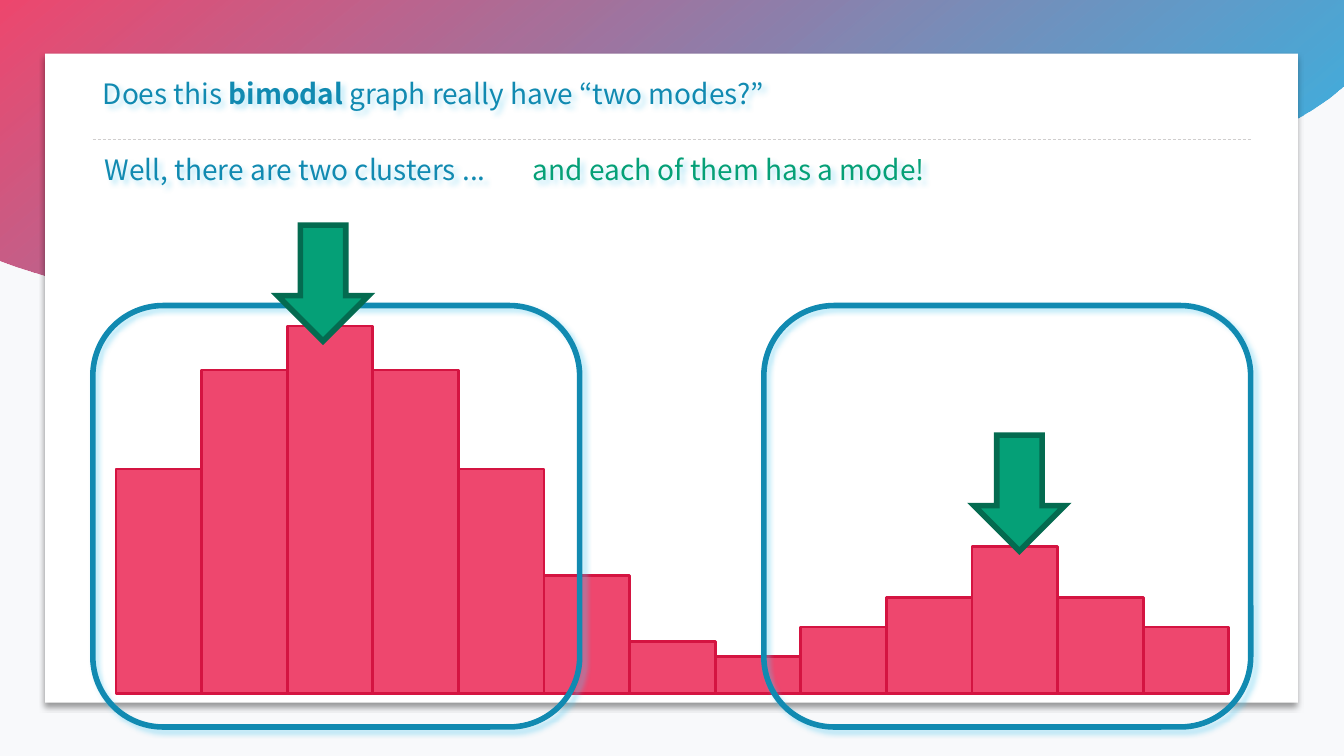
from lxml.etree import SubElement
from pptx import Presentation
from pptx.chart.data import CategoryChartData
from pptx.dml.color import RGBColor
from pptx.enum.chart import XL_CHART_TYPE
from pptx.enum.dml import MSO_LINE
from pptx.enum.shapes import MSO_CONNECTOR, MSO_SHAPE
from pptx.oxml import parse_xml
from pptx.oxml.ns import nsdecls, qn
from pptx.util import Cm, Pt

FONT = "Noto Sans CJK JP"
BLUE, GREEN, PINK, GLOW = "118AB1", "05A077", "EE476E", "52C8EE"
VALUES = (61, 88, 100, 88, 61, 32, 14, 10, 18, 26, 40, 26, 18)
# Lower edge of the wave: each curve as two handles and an end point, in cm
START = (0, 6.55)
CURVES = (
    ((3.1, 7.72), (6.76, 7.9), (9.98, 6.96)),
    ((13.46, 5.97), (16.46, 3.84), (20.12, 3.45)),
    ((23.77, 3.07), (27.64, 4.57), (31.17, 3.61)),
    ((32.18, 3.33), (33.12, 2.82), (33.87, 2.16)),
)


def color(code):
    return RGBColor.from_string(code)


def paint(shape, fill=None, line=None, width=1):
    shape.shadow.inherit = False
    if fill:
        shape.fill.solid()
        shape.fill.fore_color.rgb = color(fill)
    else:
        shape.fill.background()
    if line:
        shape.line.color.rgb = color(line)
        shape.line.width = Pt(width)
    else:
        shape.line.fill.background()


def shade(shape, code, angle):
    shape.shadow.inherit = False
    effects = shape._element.spPr.find(qn("a:effectLst"))
    effects.append(parse_xml(
        f'<a:outerShdw {nsdecls("a")} blurRad="{Pt(4)}" dist="{Pt(3)}" '
        f'dir="{angle * 60000}" algn="t" rotWithShape="0">'
        f'<a:srgbClr val="{code}"><a:alpha val="40000"/></a:srgbClr>'
        '</a:outerShdw>'))


def bezier(start, curve, steps=24):
    for step in range(1, steps + 1):
        t = step / steps
        u = 1 - t
        parts = (u ** 3, 3 * u * u * t, 3 * u * t * t, t ** 3)
        yield tuple(
            Cm(sum(k * p[axis] for k, p in zip(parts, (start, *curve))))
            for axis in (0, 1))


def add_wave(slide):
    dots, start = [(0, Cm(START[1]))], START
    for curve in CURVES:
        dots += bezier(start, curve)
        start = curve[-1]
    dots.append((Cm(33.87), 0))
    form = slide.shapes.build_freeform(0, 0)
    form.add_line_segments(dots, close=True)
    wave = form.convert_to_shape()
    paint(wave)
    wave.fill.gradient()
    wave.fill.gradient_angle = 310
    stops = wave.fill.gradient_stops
    for stop, code, place in zip(stops, (PINK, "16B3E8"), (0, 1)):
        stop.color.rgb = color(code)
        stop.position = place
    last = wave._element.spPr.findall(".//" + qn("a:srgbClr"))[-1]
    SubElement(last, qn("a:alpha"), val="90000")


def add_card(slide):
    card = slide.shapes.add_shape(
        MSO_SHAPE.RECTANGLE, Cm(1.14), Cm(1.35), Cm(31.57), Cm(16.36))
    paint(card, "FFFFFF")
    shade(card, "000000", 90)


def add_rule(slide):
    rule = slide.shapes.add_connector(
        MSO_CONNECTOR.STRAIGHT, Cm(2.34), Cm(3.51), Cm(31.57), Cm(3.51))
    rule.line.color.rgb = color("D0CECE")
    rule.line.width = Pt(0.5)
    rule.line.dash_style = MSO_LINE.DASH
    SubElement(rule._element.spPr, qn("a:effectLst"))


def add_bars(slide):
    data = CategoryChartData()
    data.categories = [str(n + 1) for n in range(len(VALUES))]
    data.add_series("Series 1", VALUES)
    chart = slide.shapes.add_chart(
        XL_CHART_TYPE.COLUMN_CLUSTERED,
        Cm(2.34), Cm(5.64), Cm(29.21), Cm(12.07), data).chart
    chart.has_legend = chart.has_title = False
    chart.font.name, chart.font.size = FONT, Pt(10)
    chart.font.color.rgb = color("000000")
    for axis in (chart.category_axis, chart.value_axis):
        axis.has_major_gridlines = False
        axis.visible = False
    chart.value_axis.minimum_scale = 0
    chart.value_axis.maximum_scale = 120
    plot = chart.plots[0]
    plot.gap_width, plot.overlap = 0, -27
    plot.vary_by_categories = False
    form = plot.series[0].format
    form.fill.solid()
    form.fill.fore_color.rgb = color(PINK)
    form.line.color.rgb = color("D41441")
    form.line.width = Pt(2)
    # Fixed plot area
    area = chart._chartSpace.find(".//" + qn("c:plotArea"))
    for old in area.findall(qn("c:layout")):
        area.remove(old)
    area.insert(0, parse_xml(
        f'<c:layout {nsdecls("c")}><c:manualLayout>'
        '<c:layoutTarget val="inner"/>'
        '<c:xMode val="edge"/><c:yMode val="edge"/>'
        '<c:x val="0.02"/><c:y val="0.06"/>'
        '<c:w val="0.96"/><c:h val="0.92"/>'
        '</c:manualLayout></c:layout>'))


def add_text(slide, left, top, code, *parts):
    box = slide.shapes.add_textbox(Cm(left), Cm(top), Cm(18.95), Cm(1.12))
    shade(box, GLOW, 45)
    box.text_frame.word_wrap = True
    par = box.text_frame.paragraphs[0]
    par.font.name, par.font.size = FONT, Pt(20)
    par.font.color.rgb = color(code)
    for part, bold in parts:
        run = par.add_run()
        run.text = part
        if bold:
            run.font.bold = True


def add_ring(slide, left):
    ring = slide.shapes.add_shape(
        MSO_SHAPE.ROUNDED_RECTANGLE, Cm(left), Cm(7.7), Cm(12.27), Cm(10.62))
    paint(ring, line=BLUE, width=4)
    shade(ring, GLOW, 45)


def add_arrow(slide, left, top):
    arrow = slide.shapes.add_shape(
        MSO_SHAPE.RIGHT_ARROW, Cm(left), Cm(top), Cm(2.92), Cm(2.29))
    arrow.rotation = 90
    paint(arrow, GREEN, "046B50", 4)
    SubElement(arrow.line._ln, qn("a:miter"), lim="800000")


def main():
    deck = Presentation()
    deck.slide_width, deck.slide_height = Cm(33.87), Cm(19.05)
    slide = deck.slides.add_slide(deck.slide_layouts[6])

    # Backdrop
    slide.background.fill.solid()
    slide.background.fill.fore_color.rgb = color("F8F9FB")
    add_wave(slide)
    add_card(slide)
    add_rule(slide)

    # Histogram
    add_bars(slide)

    # Question and answers
    add_text(slide, 2.34, 1.8, BLUE, ("Does this ", False),
             ("bimodal", True), (" graph really have “two modes?”", False))
    add_text(slide, 2.39, 3.73, BLUE,
             ("Well, there are two clusters ...", False))

    # Clusters and their modes
    for left in (2.34, 19.25):
        add_ring(slide, left)
    add_text(slide, 13.18, 3.73, GREEN,
             ("and each of them has a mode!", False))
    for left, top in ((6.68, 5.99), (24.23, 11.28)):
        add_arrow(slide, left, top)

    deck.save("out.pptx")


if __name__ == "__main__":
    main()
